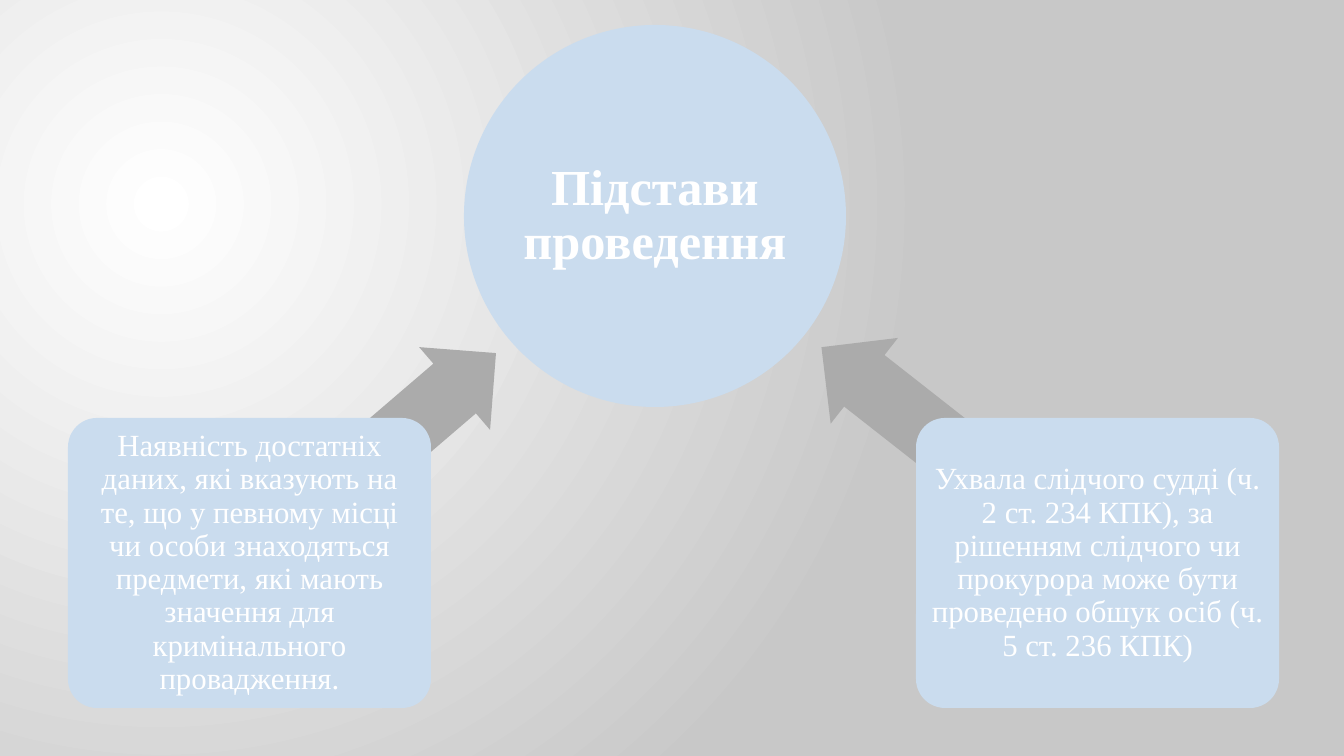
from lxml import etree
from pptx import Presentation, util as u
from pptx.dml.color import RGBColor
from pptx.enum import shapes, text
from pptx.oxml.ns import qn

PX = 914400 / 100.8
KIND = shapes.MSO_SHAPE


def hue(code):
    return RGBColor.from_string(code)


def draw(kind, box, fill, adj=()):
    shape = slide.shapes.add_shape(kind, *[round(n * PX) for n in box])
    shape.shadow.inherit = False
    shape.fill.solid()
    shape.fill.fore_color.rgb = hue(fill)
    shape.line.fill.background()
    for i, part in enumerate(adj):
        shape.adjustments[i] = part
    return shape


deck = Presentation()
deck.slide_width, deck.slide_height = u.Inches(13.333), u.Inches(7.5)
slide = deck.slides.add_slide(deck.slide_layouts[6])

# Background: radial glow from the upper left
back = slide.background.fill
back.gradient()
for stop, code in zip(back.gradient_stops, ("FFFFFF", "C8C8C8")):
    stop.color.rgb = hue(code)
grad = slide.element.find(".//" + qn("a:gradFill"))
grad.remove(grad.find(qn("a:lin")))
glow = etree.SubElement(grad, qn("a:path"), path="circle")
etree.SubElement(glow, qn("a:fillToRect"), l="50000", t="55000", r="125000", b="100000")

# Arrows, each tucked under its ground and pointing at the topic
for box, turn in (((211, 404, 324, 109), 139.4), ((784, 401, 351, 109), 38.1)):
    draw(KIND.LEFT_ARROW, box, "ABABAB", (0.6, 0.5)).rotation = turn

# Topic circle and the two grounds
cards = [
    (KIND.OVAL, (464, 25, 382, 382), (), 3, 36, True, "Підстави проведення"),
    (KIND.ROUNDED_RECTANGLE, (68, 418, 363, 290), (0.1,), 5, 22, False,
     "Наявність достатніх даних, які вказують на те, що у певному місці чи особи "
     "знаходяться предмети, які мають значення для кримінального провадження."),
    (KIND.ROUNDED_RECTANGLE, (916, 418, 363, 290), (0.1,), 5, 22, False,
     "Ухвала слідчого судді (ч. 2 ст. 234 КПК), за рішенням слідчого чи прокурора "
     "може бути проведено обшук осіб (ч. 5 ст. 236 КПК)"),
]
for kind, box, adj, pad, size, bold, words in cards:
    frame = draw(kind, box, "CADCEE", adj).text_frame
    frame.word_wrap = True
    frame.vertical_anchor = text.MSO_ANCHOR.MIDDLE
    frame.margin_left = frame.margin_right = round(pad * PX)
    frame.margin_top = frame.margin_bottom = round(pad * PX)
    para = frame.paragraphs[0]
    para.text = words
    para.alignment = text.PP_ALIGN.CENTER
    para.line_spacing = 0.9
    font = para.font
    font.name, font.size, font.bold = "Times New Roman", u.Pt(size), bold
    font.color.rgb = hue("FFFFFF")

deck.save("out.pptx")
